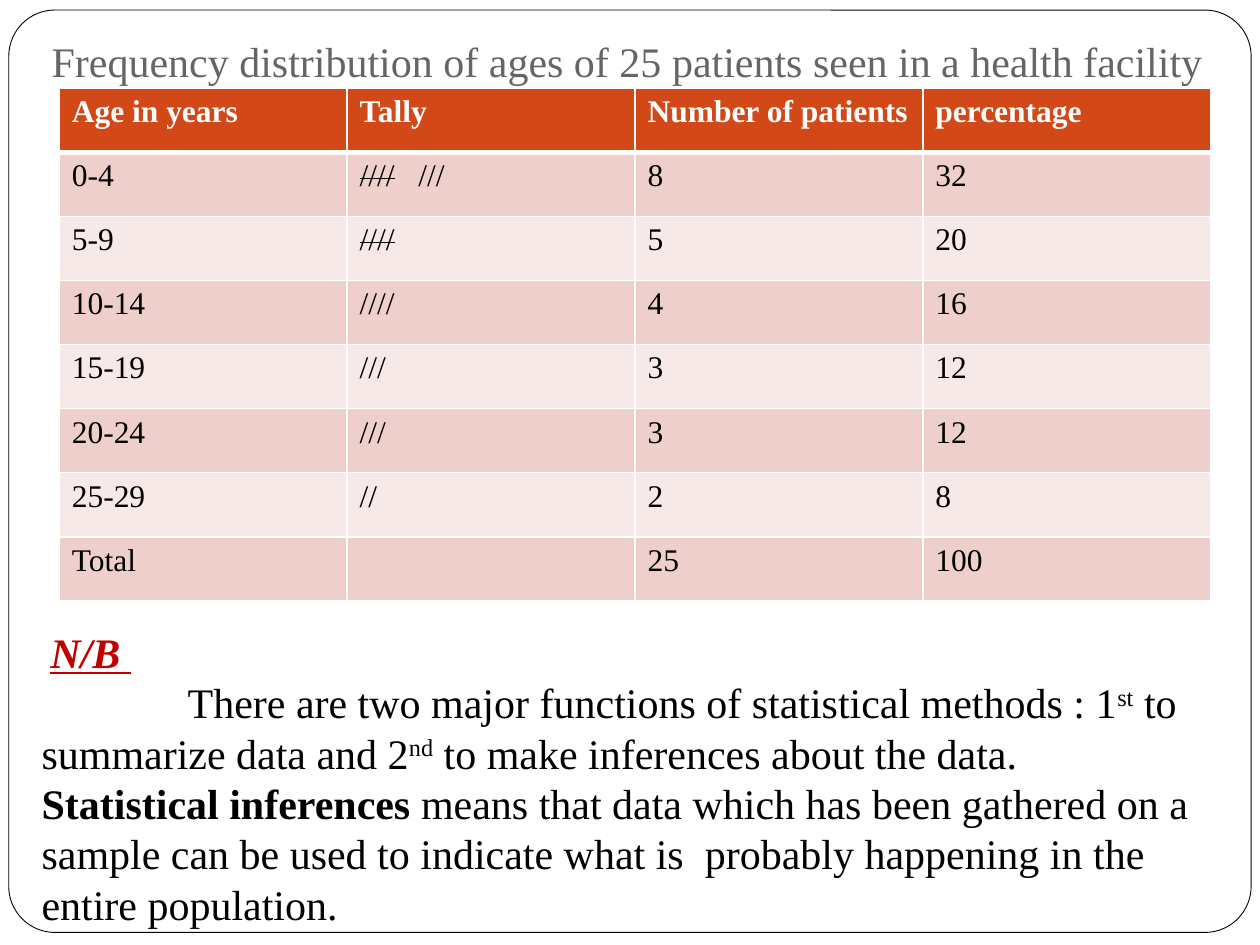
import dataclasses
import typing

import pptx
import pptx.dml.color
import pptx.enum.shapes
import pptx.enum.text
import pptx.oxml
import pptx.oxml.ns
import pptx.util

Inches = pptx.util.Inches
FONT = "Times New Roman"
COLORS = {
    "white": "FFFFFF",
    "black": "000000",
    "title": "696464",
    "note": "C00000",
    "header": "D34817",
    "odd": "EFCFCC",
    "even": "F7E9E8",
}


@dataclasses.dataclass(frozen=True)
class Span:
    text: str
    bold: bool = False
    superscript: bool = False
    strike: bool = False


@dataclasses.dataclass(frozen=True)
class AgeGroup:
    ages: str
    tally: tuple[Span, ...]
    patients: str
    percentage: str


HEADINGS = ("Age in years", "Tally", "Number of patients", "percentage")
FIVE = Span("////", strike=True)
AGE_GROUPS = (
    AgeGroup("0-4", (FIVE, Span("   ///")), "8", "32"),
    AgeGroup("5-9", (FIVE,), "5", "20"),
    AgeGroup("10-14", (Span("////"),), "4", "16"),
    AgeGroup("15-19", (Span("///"),), "3", "12"),
    AgeGroup("20-24", (Span("///"),), "3", "12"),
    AgeGroup("25-29", (Span("//"),), "2", "8"),
    AgeGroup("Total", (), "25", "100"),
)
FUNCTIONS = (
    Span("There are two major functions of statistical methods : 1"),
    Span("st", superscript=True),
    Span(" to summarize data and 2"),
    Span("nd", superscript=True),
    Span(" to make inferences about the data."),
)
INFERENCES = (
    Span("Statistical inferences ", bold=True),
    Span(
        "means that data which has been gathered on a sample can be used to "
        "indicate what is  probably happening in the entire population."
    ),
)


def color(name: str) -> pptx.dml.color.RGBColor:
    return pptx.dml.color.RGBColor.from_string(COLORS[name])


def format_paragraph(paragraph: typing.Any, size: int, color_name: str) -> None:
    paragraph.font.name = FONT
    paragraph.font.size = pptx.util.Pt(size)
    paragraph.font.color.rgb = color(color_name)
    paragraph.alignment = pptx.enum.text.PP_ALIGN.LEFT


def add_spans(paragraph: typing.Any, spans: typing.Iterable[Span]) -> None:
    for span in spans:
        run = paragraph.add_run()
        run.text = span.text
        if span.bold:
            run.font.bold = True
        properties = run.font._element
        if span.superscript:
            properties.set("baseline", "30000")
        if span.strike:
            properties.set("strike", "sngStrike")


def place(shape: typing.Any, left: float, top: float, width: float, height: float) -> None:
    shape.left, shape.top = Inches(left), Inches(top)
    shape.width, shape.height = Inches(width), Inches(height)


def add_frame(slide: typing.Any) -> None:
    frame = slide.shapes.add_shape(
        pptx.enum.shapes.MSO_SHAPE.ROUNDED_RECTANGLE,
        Inches(0.07), Inches(0.08), Inches(9.86), Inches(7.32),
    )
    frame.adjustments[0] = 0.05
    frame.shadow.inherit = False
    frame.fill.solid()
    frame.fill.fore_color.rgb = color("white")
    frame.line.color.rgb = color("black")
    frame.line.width = pptx.util.Pt(0.5)
    frame.element.getparent().insert(2, frame.element)


def fill_title(title: typing.Any) -> None:
    place(title, 0.31, 0.23, 9.53, 0.5)
    title.text_frame.auto_size = pptx.enum.text.MSO_AUTO_SIZE.NONE
    paragraph = title.text_frame.paragraphs[0]
    paragraph.text = "Frequency distribution of ages of 25 patients seen in a health facility"
    format_paragraph(paragraph, 24, "title")


def add_note_paragraph(paragraph: typing.Any, indent: float, color_name: str,
                       spans: typing.Iterable[Span]) -> None:
    properties = paragraph._p.get_or_add_pPr()
    properties.set("marL", "0")
    properties.set("indent", str(Inches(indent)))
    paragraph.line_spacing = 1.0
    paragraph.space_before = pptx.util.Pt(0)
    properties.append(pptx.oxml.parse_xml(f'<a:buNone {pptx.oxml.ns.nsdecls("a")}/>'))
    format_paragraph(paragraph, 24, color_name)
    add_spans(paragraph, spans)


def fill_notes(body: typing.Any) -> None:
    place(body, 0.23, 4.92, 9.61, 2.12)
    frame = body.text_frame
    frame.auto_size = pptx.enum.text.MSO_AUTO_SIZE.NONE
    frame.vertical_anchor = pptx.enum.text.MSO_ANCHOR.TOP
    heading = frame.paragraphs[0]
    add_note_paragraph(heading, 0.07, "note", [Span("N/B ")])
    heading.font.bold = heading.font.italic = heading.font.underline = True
    add_note_paragraph(frame.add_paragraph(), 1.16, "black", FUNCTIONS)
    add_note_paragraph(frame.add_paragraph(), 0, "black", INFERENCES)


def add_borders(cell: typing.Any, widths: dict[str, float]) -> None:
    properties = cell._tc.get_or_add_tcPr()
    for side, width in widths.items():
        properties.append(pptx.oxml.parse_xml(
            f'<a:ln{side} {pptx.oxml.ns.nsdecls("a")} w="{pptx.util.Pt(width)}">'
            f'<a:solidFill><a:srgbClr val="{COLORS["white"]}"/></a:solidFill></a:ln{side}>'
        ))


def add_age_table(slide: typing.Any) -> None:
    rows = [[(Span(heading, bold=True),) for heading in HEADINGS]]
    for group in AGE_GROUPS:
        rows.append([
            (Span(group.ages),), group.tally,
            (Span(group.patients),), (Span(group.percentage),),
        ])
    table = slide.shapes.add_table(
        len(rows), len(HEADINGS), Inches(0.47), Inches(0.7), Inches(9.14), Inches(4.07)
    ).table
    for row_index, row in enumerate(rows):
        is_header = row_index == 0
        fill_name = "header" if is_header else ("even", "odd")[row_index % 2]
        widths = {"L": 1, "R": 1, "T": 3 if row_index == 1 else 1, "B": 3 if is_header else 1}
        for column_index, spans in enumerate(row):
            cell = table.cell(row_index, column_index)
            add_borders(cell, widths)
            cell.fill.solid()
            cell.fill.fore_color.rgb = color(fill_name)
            paragraph = cell.text_frame.paragraphs[0]
            format_paragraph(paragraph, 18, "white" if is_header else "black")
            add_spans(paragraph, spans)


def main() -> None:
    presentation = pptx.Presentation()
    presentation.slide_width, presentation.slide_height = Inches(10), Inches(7.5)
    slide = presentation.slides.add_slide(presentation.slide_layouts[1])
    add_frame(slide)
    fill_title(slide.shapes.title)
    fill_notes(slide.placeholders[1])
    add_age_table(slide)
    presentation.save("out.pptx")


if __name__ == "__main__":
    main()
